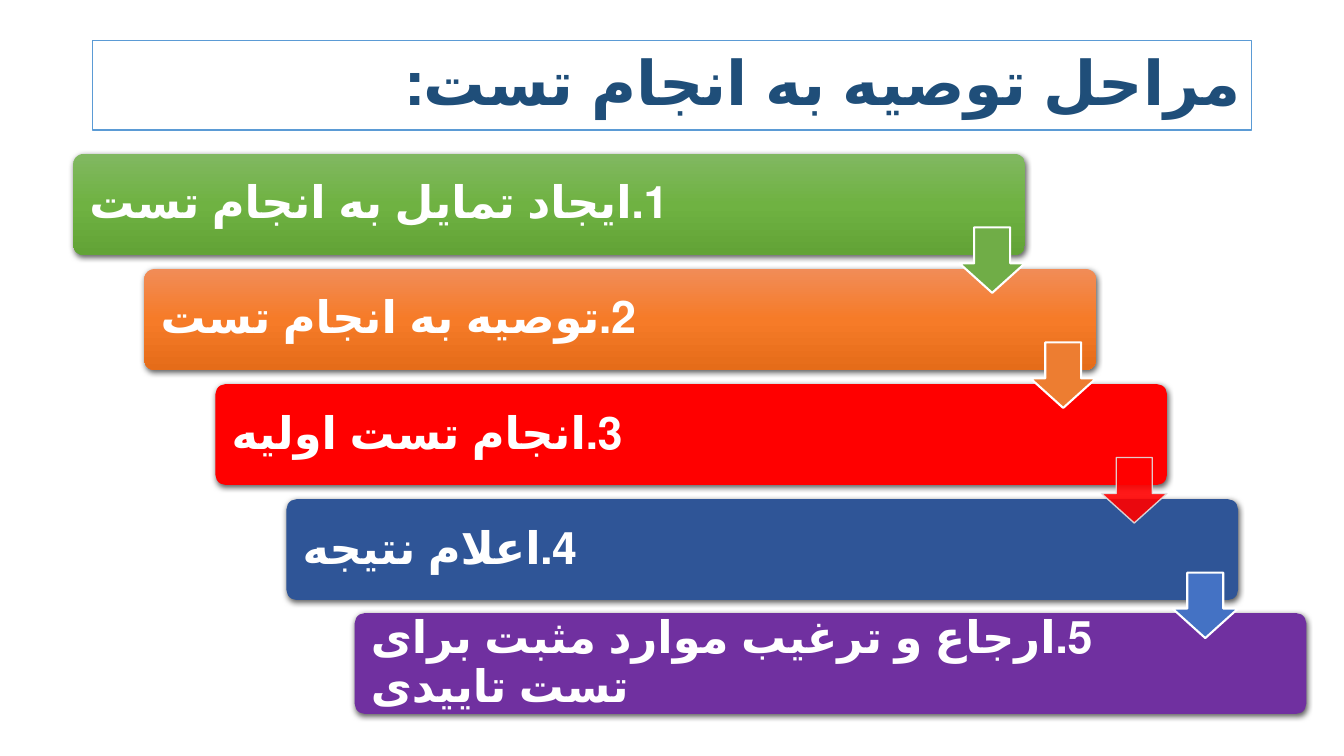
from dataclasses import dataclass

from lxml.etree import SubElement
from pptx import Presentation
from pptx.dml.color import RGBColor
from pptx.enum.lang import MSO_LANGUAGE_ID as LANG
from pptx.enum.shapes import MSO_SHAPE as SHAPE
from pptx.enum.text import MSO_ANCHOR as ANCHOR, PP_ALIGN as ALIGN
from pptx.oxml.ns import qn
from pptx.shapes.autoshape import Shape
from pptx.util import Cm, Pt

WHITE = RGBColor(0xFF, 0xFF, 0xFF)
NAVY = RGBColor(0x1F, 0x4E, 0x79)
SKY = RGBColor(0x5B, 0x9B, 0xD5)
GREEN = RGBColor(0x70, 0xAD, 0x47)
GREENS = (RGBColor(0x81, 0xB8, 0x61), RGBColor(0x6F, 0xB2, 0x42), RGBColor(0x62, 0xA3, 0x36))
ORANGE = RGBColor(0xED, 0x7D, 0x31)
ORANGES = (RGBColor(0xF1, 0x8C, 0x57), RGBColor(0xF6, 0x7B, 0x28), RGBColor(0xE5, 0x6C, 0x19))
RED = RGBColor(0xFF, 0x00, 0x00)
PALE_GRAY = RGBColor(0xE1, 0xE1, 0xE1)
BLUE = RGBColor(0x44, 0x72, 0xC4)
DARK_BLUE = RGBColor(0x2F, 0x55, 0x97)
PURPLE = RGBColor(0x70, 0x30, 0xA0)

FONT = "Calibri"
BAR_LEFT, BAR_TOP = 1.85, 3.88
BAR_W, BAR_H = 23.98, 2.54
STEP_X, STEP_Y = 1.79, 2.9
ARROW_DX, ARROW_DY, ARROW_SIZE = 22.33, 1.85, 1.65


@dataclass
class Step:
    """One bar of the staircase; several bar colours make a gradient."""
    text: str
    bar: tuple[RGBColor, ...]
    arrow: RGBColor | None = None
    arrow_line: RGBColor = WHITE
    arrow_line_pt: float = 1.5
    arrow_alpha: int = 100
    dx: float = 0
    dy: float = 0


STEPS = [
    Step("1.ایجاد تمایل به انجام تست", GREENS, GREEN),
    Step("2.توصیه به انجام تست", ORANGES, ORANGE),
    Step("3.انجام تست اولیه", (RED,), RED, PALE_GRAY, 1, 90),
    Step("4.اعلام نتیجه", (DARK_BLUE,), BLUE),
    Step("5.ارجاع و ترغیب موارد مثبت برای تست تاییدی", (PURPLE,), dx=-0.07, dy=-0.03),
]


def add_shape(shapes, kind: SHAPE, x: float, y: float, w: float, h: float) -> Shape:
    sp = shapes.add_shape(kind, Cm(x), Cm(y), Cm(w), Cm(h))
    sp.shadow.inherit = False
    return sp


def write(sp: Shape, text: str, *, size: float, color: RGBColor, align: ALIGN,
          margins: tuple[float, float, float, float]) -> None:
    """Put one bold right-to-left paragraph in the shape; margins are l, t, r, b in cm."""
    tf = sp.text_frame
    tf.word_wrap = True
    tf.vertical_anchor = ANCHOR.MIDDLE
    tf.margin_left, tf.margin_top, tf.margin_right, tf.margin_bottom = map(Cm, margins)
    p = tf.paragraphs[0]
    p.alignment = align
    p.line_spacing = 0.9
    p._p.get_or_add_pPr().set("rtl", "1")
    r = p.add_run()
    r.text = text
    r.font.name, r.font.size, r.font.bold = FONT, Pt(size), True
    r.font.language_id = LANG.FARSI
    r.font.color.rgb = color


def fill_shape(sp: Shape, colors: tuple[RGBColor, ...]) -> None:
    """Fill plainly with one colour, or from top to bottom with several."""
    if len(colors) == 1:
        sp.fill.solid()
        sp.fill.fore_color.rgb = colors[0]
        return
    sp.fill.gradient()
    sp.fill.gradient_angle = 270
    stops = sp.element.spPr.find(f".//{qn('a:gsLst')}")
    stops.clear()
    for i, color in enumerate(colors):
        stop = SubElement(stops, qn("a:gs"), pos=str(100000 * i // (len(colors) - 1)))
        SubElement(stop, qn("a:srgbClr"), val=str(color))


def add_soft_shadow(sp: Shape) -> None:
    effects = sp.element.spPr.find(qn("a:effectLst"))
    shadow = SubElement(effects, qn("a:outerShdw"), blurRad=str(Pt(4.5)),
                        dist=str(Pt(1.5)), dir="5400000", algn="ctr", rotWithShape="0")
    color = SubElement(shadow, qn("a:srgbClr"), val="000000")
    SubElement(color, qn("a:alpha"), val="63000")


def set_alpha(sp: Shape, percent: int) -> None:
    """Make both fill and line partly transparent."""
    for color in sp.element.spPr.iter(qn("a:srgbClr")):
        SubElement(color, qn("a:alpha"), val=str(percent * 1000))


def add_title(shapes) -> None:
    sp = add_shape(shapes, SHAPE.RECTANGLE, 2.33, 1.02, 29.21, 2.26)
    fill_shape(sp, (WHITE,))
    sp.line.color.rgb = SKY
    sp.line.width = Pt(1)
    write(sp, "مراحل توصیه به انجام تست:", size=44, color=NAVY, align=ALIGN.RIGHT,
          margins=(0.25, 0.13, 0.25, 0.13))


def add_bar(shapes, step: Step, x: float, y: float) -> None:
    sp = add_shape(shapes, SHAPE.ROUNDED_RECTANGLE, x, y, BAR_W, BAR_H)
    sp.adjustments[0] = 0.1
    fill_shape(sp, step.bar)
    sp.line.fill.background()
    add_soft_shadow(sp)
    write(sp, step.text, size=32, color=WHITE, align=ALIGN.LEFT,
          margins=(0.33, 0.33, 3.53, 0.33))


def add_arrow(shapes, step: Step, x: float, y: float) -> None:
    sp = add_shape(shapes, SHAPE.DOWN_ARROW, x, y, ARROW_SIZE, ARROW_SIZE)
    sp.adjustments[0], sp.adjustments[1] = 0.55, 0.45
    fill_shape(sp, (step.arrow,))
    sp.line.color.rgb = step.arrow_line
    sp.line.width = Pt(step.arrow_line_pt)
    if step.arrow_alpha < 100:
        set_alpha(sp, step.arrow_alpha)


def main() -> None:
    prs = Presentation()
    prs.slide_width, prs.slide_height = Cm(33.87), Cm(19.05)
    shapes = prs.slides.add_slide(prs.slide_layouts[6]).shapes
    add_title(shapes)
    corners = [(BAR_LEFT + i * STEP_X + step.dx, BAR_TOP + i * STEP_Y + step.dy)
               for i, step in enumerate(STEPS)]
    for step, (x, y) in zip(STEPS, corners):
        add_bar(shapes, step, x, y)
    for step, (x, y) in zip(STEPS, corners):
        if step.arrow is not None:
            add_arrow(shapes, step, x + ARROW_DX, y + ARROW_DY)
    prs.save("out.pptx")


if __name__ == "__main__":
    main()
